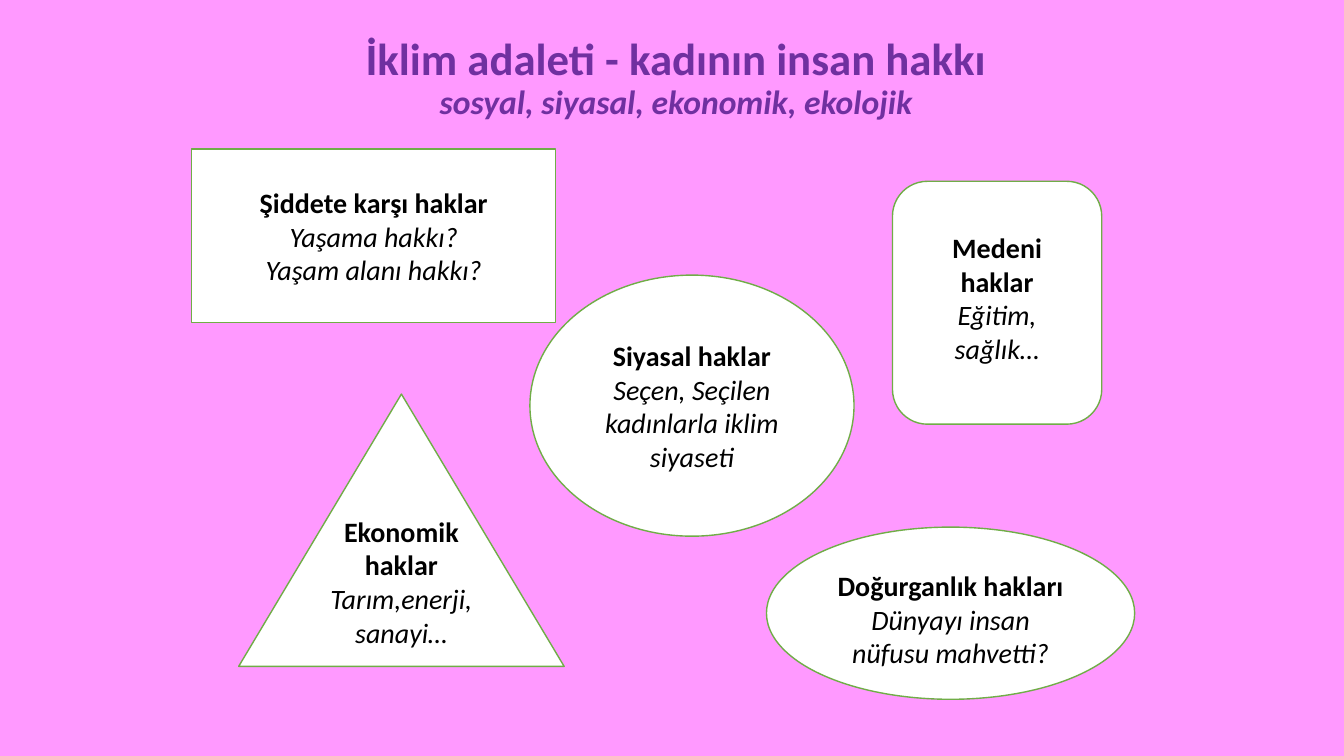
from pptx import Presentation
from pptx.dml.color import RGBColor
from pptx.enum.shapes import MSO_SHAPE as Shape
from pptx.enum.text import MSO_ANCHOR as Anchor, PP_ALIGN as Align
from pptx.util import Pt

COLORS = {
    "background": "FF99FF",
    "title": "7030A0",
    "fill": "FFFFFF",
    "outline": "70AD47",
    "text": "000000",
}


def color(name):
    return RGBColor.from_string(COLORS[name])


def add_span(para, text, size, color_name, bold, italic):
    span = para.add_run()
    span.text = text
    span.font.name = "Calibri"
    span.font.size = Pt(size)
    span.font.color.rgb = color(color_name)
    span.font.bold = bold
    span.font.italic = italic


deck = Presentation()
deck.slide_width, deck.slide_height = Pt(960), Pt(540)
page = deck.slides.add_slide(deck.slide_layouts[6])
page.background.fill.solid()
page.background.fill.fore_color.rgb = color("background")

title = page.shapes.add_textbox(Pt(159), Pt(11.5), Pt(648), Pt(90)).text_frame
title.word_wrap = True
title.vertical_anchor = Anchor.MIDDLE
para = title.paragraphs[0]
para.alignment = Align.CENTER
para.line_spacing = 0.9
add_span(para, "İklim adaleti - kadının insan hakkı", 32, "title", True, False)
para.add_line_break()
add_span(para, "sosyal, siyasal, ekonomik, ekolojik", 24, "title", True, True)

rights = [
    (Shape.RECTANGLE, (137, 106.5, 260, 124), (4, 4),
     ["Şiddete karşı haklar", "Yaşama hakkı?", "Yaşam alanı hakkı?"]),
    (Shape.OVAL, (547.5, 376.5, 263, 123), (8, 0),
     ["Doğurganlık hakları", "Dünyayı insan nüfusu mahvetti?"]),
    (Shape.ROUNDED_RECTANGLE, (637.5, 129.5, 149.5, 173.5), (4, 11),
     ["Medeni haklar", "Eğitim, sağlık…"]),
    (Shape.ISOSCELES_TRIANGLE, (170.5, 281.5, 232.5, 194.5), (0, 24),
     ["Ekonomik haklar", "Tarım,enerji, sanayi…"]),
    (Shape.OVAL, (378.5, 196.5, 231.5, 186.5), (4, 4),
     ["Siyasal haklar", "Seçen, Seçilen kadınlarla iklim siyaseti"]),
]

for outline, place, (top, bottom), lines in rights:
    box = page.shapes.add_shape(outline, *map(Pt, place))
    box.shadow.inherit = False
    box.fill.solid()
    box.fill.fore_color.rgb = color("fill")
    box.line.color.rgb = color("outline")
    box.line.width = Pt(1)
    frame = box.text_frame
    frame.word_wrap = True
    frame.vertical_anchor = Anchor.MIDDLE
    frame.margin_top, frame.margin_bottom = Pt(top), Pt(bottom)
    for index, line in enumerate(lines):
        para = frame.add_paragraph() if index else frame.paragraphs[0]
        para.alignment = Align.CENTER
        add_span(para, line, 20, "text", index == 0, index > 0)

deck.save("out.pptx")
